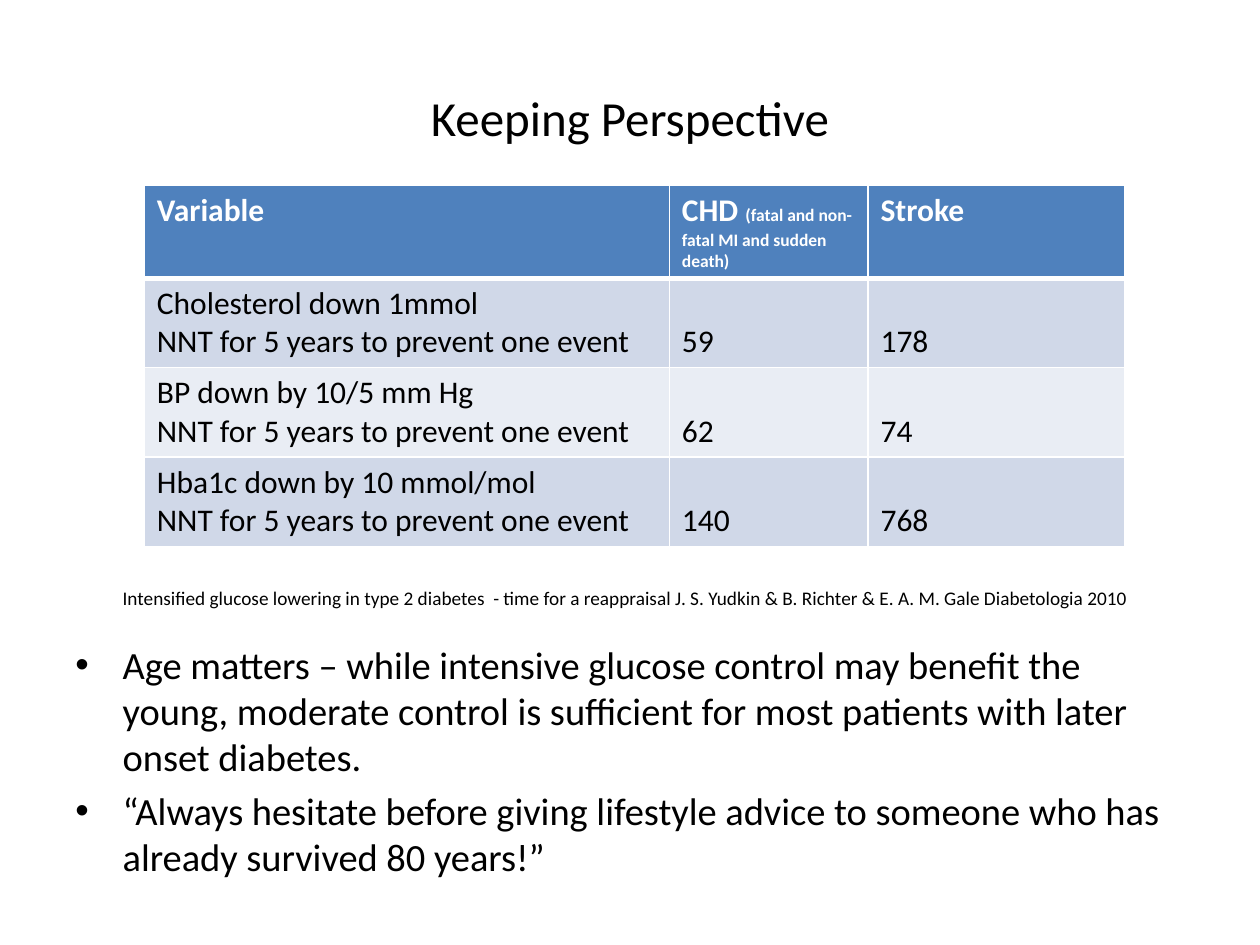
import dataclasses

import pptx
import pptx.dml.color
import pptx.enum.text
import pptx.oxml
import pptx.oxml.ns
import pptx.util

Pt = pptx.util.Pt
Align = pptx.enum.text.PP_ALIGN
Anchor = pptx.enum.text.MSO_ANCHOR


@dataclasses.dataclass(frozen=True)
class Theme:
    font: str = "Calibri"
    ink: str = "000000"
    white: str = "FFFFFF"
    head: str = "4F81BD"
    bands: tuple = ("D0D8E8", "E9EDF4")
    title: int = 28
    body: int = 22
    cell: int = 18
    cite: int = 11
    note: int = 10


class Page:
    def __init__(self, theme, slide):
        self.theme = theme
        self.slide = slide

    def run(self, para, text, size, color=None, bold=False):
        run = para.add_run()
        run.text = text
        font = run.font
        font.name, font.size, font.bold = self.theme.font, Pt(size), bold
        font.color.rgb = pptx.dml.color.RGBColor.from_string(color or self.theme.ink)

    def frame(self, box, anchor=Anchor.TOP):
        """Add a wrapping text box and return its text frame."""
        frame = self.slide.shapes.add_textbox(*map(Pt, box)).text_frame
        frame.word_wrap = True
        frame.vertical_anchor = anchor
        return frame

    def line(self, box, text, size, align=Align.LEFT, anchor=Anchor.TOP):
        para = self.frame(box, anchor).paragraphs[0]
        para.alignment = align
        self.run(para, text, size)

    def bullets(self, box, items, indent, gap):
        frame = self.frame(box)
        for i, item in enumerate(items):
            para = frame.add_paragraph() if i else frame.paragraphs[0]
            para.space_after = Pt(gap)
            self.run(para, item, self.theme.body)
            props = para._p.get_or_add_pPr()
            props.set("marL", str(Pt(indent)))
            props.set("indent", str(Pt(-indent)))
            ns = pptx.oxml.ns.nsdecls("a")
            for mark in (f'<a:buFont {ns} typeface="Arial"/>', f'<a:buChar {ns} char="•"/>'):
                props.append(pptx.oxml.parse_xml(mark))

    def edges(self, cell, widths):
        """Draw the cell's white borders; widths maps side to points."""
        props = cell._tc.get_or_add_tcPr()
        for side, width in widths.items():
            props.append(pptx.oxml.parse_xml(
                f'<a:ln{side} {pptx.oxml.ns.nsdecls("a")} w="{Pt(width)}"><a:solidFill>'
                f'<a:srgbClr val="{self.theme.white}"/></a:solidFill></a:ln{side}>'))

    def cell(self, cell, paras, fill, color, bold, anchor, widths):
        """Fill a cell; each paragraph is a list of (text, size) runs."""
        self.edges(cell, widths)
        cell.fill.solid()
        cell.fill.fore_color.rgb = pptx.dml.color.RGBColor.from_string(fill)
        cell.vertical_anchor = anchor
        frame = cell.text_frame
        for i, runs in enumerate(paras):
            para = frame.add_paragraph() if i else frame.paragraphs[0]
            for text, size in runs:
                self.run(para, text, size, color, bold)

    def table(self, left, top, cols, rows, head, data):
        theme = self.theme
        grid = self.slide.shapes.add_table(
            len(rows), len(cols), Pt(left), Pt(top), Pt(sum(cols)), Pt(sum(rows))).table
        for col, width in zip(grid.columns, cols):
            col.width = Pt(width)
        for row, height in zip(grid.rows, rows):
            row.height = Pt(height)
        for c, runs in enumerate(head):
            self.cell(grid.cell(0, c), [runs], theme.head, theme.white, True,
                      Anchor.TOP, dict(L=1, R=1, T=1, B=3))
        for r, texts in enumerate(data, 1):
            fill = theme.bands[(r - 1) % 2]
            for c, lines in enumerate(texts):
                paras = [[(text, theme.cell)] for text in lines]
                self.cell(grid.cell(r, c), paras, fill, theme.ink, False,
                          Anchor.BOTTOM, dict(L=1, R=1, T=3 if r == 1 else 1, B=1))


def main():
    deck = pptx.Presentation()
    deck.slide_width, deck.slide_height = Pt(720), Pt(540)
    theme = Theme()
    page = Page(theme, deck.slides.add_slide(deck.slide_layouts[6]))

    page.line((36, 21.6, 648, 90), "Keeping Perspective", theme.title,
              Align.CENTER, Anchor.MIDDLE)

    head = [
        [("Variable", theme.cell)],
        [("CHD ", theme.cell), ("(fatal and non-fatal MI and sudden death)", theme.note)],
        [("Stroke", theme.cell)],
    ]
    goal = "NNT for 5 years to prevent one event"
    trials = [
        ("Cholesterol down 1mmol", "59", "178"),
        ("BP down by 10/5 mm Hg", "62", "74"),
        ("Hba1c down by 10 mmol/mol", "140", "768"),
    ]
    data = [((name, goal), (chd,), (stroke,)) for name, chd, stroke in trials]
    page.table(82.5, 105.8, (300, 113.5, 147), (53.2, 51.1, 51.1, 51.1), head, data)

    page.line((63, 331.6, 621, 21),
              "Intensified glucose lowering in type 2 diabetes  - time for a reappraisal "
              "J. S. Yudkin & B. Richter & E. A. M. Gale Diabetologia 2010", theme.cite)
    page.bullets((36, 362.8, 648, 146), [
        "Age matters – while intensive glucose control may benefit the young, "
        "moderate control is sufficient for most patients with later onset diabetes.",
        "“Always hesitate before giving lifestyle advice to someone who has "
        "already survived 80 years!”",
    ], indent=27, gap=4)

    deck.save("out.pptx")


if __name__ == "__main__":
    main()
